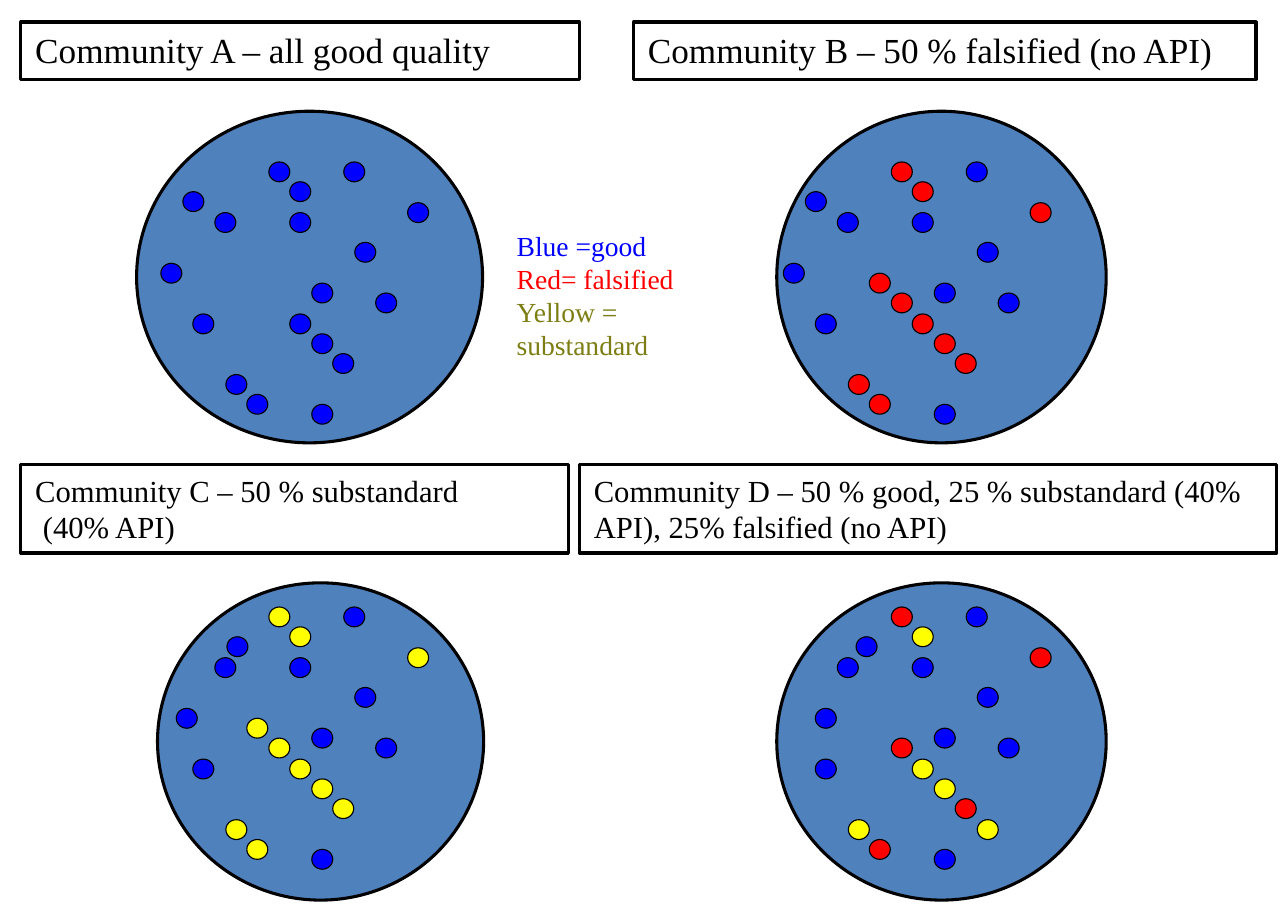
from pptx import Presentation
from pptx.dml.color import RGBColor
from pptx.enum.shapes import MSO_SHAPE
from pptx.enum.text import MSO_ANCHOR, MSO_AUTO_SIZE, PP_ALIGN
from pptx.util import Inches, Pt

ELLIPSE, RECTANGLE = MSO_SHAPE.OVAL, MSO_SHAPE.RECTANGLE
TOP, LEFT, GROW = MSO_ANCHOR.TOP, PP_ALIGN.LEFT, MSO_AUTO_SIZE.SHAPE_TO_FIT_TEXT
BLACK = RGBColor(0x00, 0x00, 0x00)
STEEL = RGBColor(0x4F, 0x81, 0xBD)
BLUE = RGBColor(0x00, 0x00, 0xFF)
RED = RGBColor(0xFF, 0x00, 0x00)
YELLOW = RGBColor(0xFF, 0xFF, 0x00)
OLIVE = RGBColor(0x7C, 0x7E, 0x13)
FONT = "Times New Roman"
DOT_WIDTH, DOT_HEIGHT = 0.19, 0.18

GOOD_SPOTS = [(1.17, 0.46), (1.37, 1.1), (1.76, 0.73), (1.95, 1.19),
              (0.29, 1.38), (0.49, 0.46), (1.37, 2.2), (1.66, 0)]
VARIED_SPOTS = [(0.98, 0), (1.17, 0.18), (2.24, 0.37), (1.17, 1.38),
                (1.37, 1.56), (1.56, 1.74), (0.59, 1.93), (0.78, 2.11)]
LEFT_SPOTS = [(0, 0.92, BLUE), (0.2, 0.27, BLUE)]

COMMUNITIES = [
    dict(caption=["Community A – all good quality"], size=23,
         caption_box=(0.19, 0.2, 5.07, 0.52), circle_box=(1.24, 1.01, 3.14, 3.01),
         inset=(0.22, 0.46), varied=[BLUE] * 8, extra=LEFT_SPOTS),
    dict(caption=["Community B – 50 % falsified (no API)"], size=23,
         caption_box=(5.75, 0.2, 5.65, 0.52), circle_box=(7.05, 1.01, 2.99, 3.01),
         inset=(0.06, 0.46), varied=[RED] * 8,
         extra=LEFT_SPOTS + [(0.78, 1.01, RED), (0.98, 1.19, RED)]),
    dict(caption=["Community C – 50 % substandard", " (40% API)"], size=20,
         caption_box=(0.19, 4.22, 4.97, 0.8), circle_box=(1.43, 5.29, 2.96, 2.88),
         inset=(0.03, 0.22), varied=[YELLOW] * 8,
         extra=[(0.14, 0.92, BLUE), (0.6, 0.27, BLUE),
                (0.78, 1.01, YELLOW), (0.98, 1.19, YELLOW)]),
    dict(caption=["Community D – 50 % good, 25 % substandard (40% API), "
                  "25% falsified (no API)"], size=20,
         caption_box=(5.26, 4.22, 6.33, 0.8), circle_box=(7.05, 5.29, 2.99, 2.88),
         inset=(0.06, 0.22),
         varied=[RED, YELLOW, RED, YELLOW, YELLOW, RED, YELLOW, RED],
         extra=[(0.29, 0.92, BLUE), (0.66, 0.27, BLUE),
                (0.98, 1.19, RED), (1.76, 1.93, YELLOW)]),
]
LEGEND = [("Blue =good", BLUE), ("Red= falsified", RED), ("Yellow = substandard", OLIVE)]


def add_outlined(slide, kind, box, fill, weight):
    """Add a black-outlined shape, unfilled when fill is None."""
    shape = slide.shapes.add_shape(kind, *map(Inches, box))
    shape.shadow.inherit = False
    if fill is None:
        shape.fill.background()
    else:
        shape.fill.solid()
        shape.fill.fore_color.rgb = fill
    shape.line.color.rgb = BLACK
    shape.line.width = Pt(weight)
    return shape


def write_lines(shape, lines, size):
    """Write (text, colour) lines as left-aligned paragraphs in a shape."""
    frame = shape.text_frame
    frame.word_wrap = True
    frame.auto_size = GROW
    frame.vertical_anchor = TOP
    frame.margin_left = frame.margin_right = Inches(0.13)
    frame.margin_top = frame.margin_bottom = Inches(0.06)
    for index, (text, colour) in enumerate(lines):
        paragraph = frame.add_paragraph() if index else frame.paragraphs[0]
        paragraph.alignment = LEFT
        run = paragraph.add_run()
        run.text = text
        run.font.name = FONT
        run.font.size = Pt(size)
        run.font.color.rgb = colour


def add_caption(slide, box, lines, size):
    """Add the framed title of a community."""
    shape = add_outlined(slide, RECTANGLE, box, None, 2)
    write_lines(shape, [(line, BLACK) for line in lines], size)


def add_population(slide, box, inset, varied, extra):
    """Add a community circle and its medicine dots, inset from the box corner."""
    add_outlined(slide, ELLIPSE, box, STEEL, 2)
    left, top = box[0] + inset[0], box[1] + inset[1]
    dots = [(x, y, BLUE) for x, y in GOOD_SPOTS]
    dots += [(x, y, colour) for (x, y), colour in zip(VARIED_SPOTS, varied)]
    for x, y, colour in dots + extra:
        dot_box = (left + x, top + y, DOT_WIDTH, DOT_HEIGHT)
        add_outlined(slide, ELLIPSE, dot_box, colour, 0.75)


def add_legend(slide, box):
    """Add the colour key between the upper circles."""
    write_lines(slide.shapes.add_textbox(*map(Inches, box)), LEGEND, 18)


def main():
    """Build the slide of four communities and save it."""
    presentation = Presentation()
    presentation.slide_width = Inches(11.69)
    presentation.slide_height = Inches(8.26)
    slide = presentation.slides.add_slide(presentation.slide_layouts[6])
    for community in COMMUNITIES:
        add_caption(slide, community["caption_box"], community["caption"], community["size"])
        add_population(slide, community["circle_box"], community["inset"],
                       community["varied"], community["extra"])
    add_legend(slide, (4.56, 2.02, 2.39, 1.34))
    presentation.save("out.pptx")


if __name__ == "__main__":
    main()
